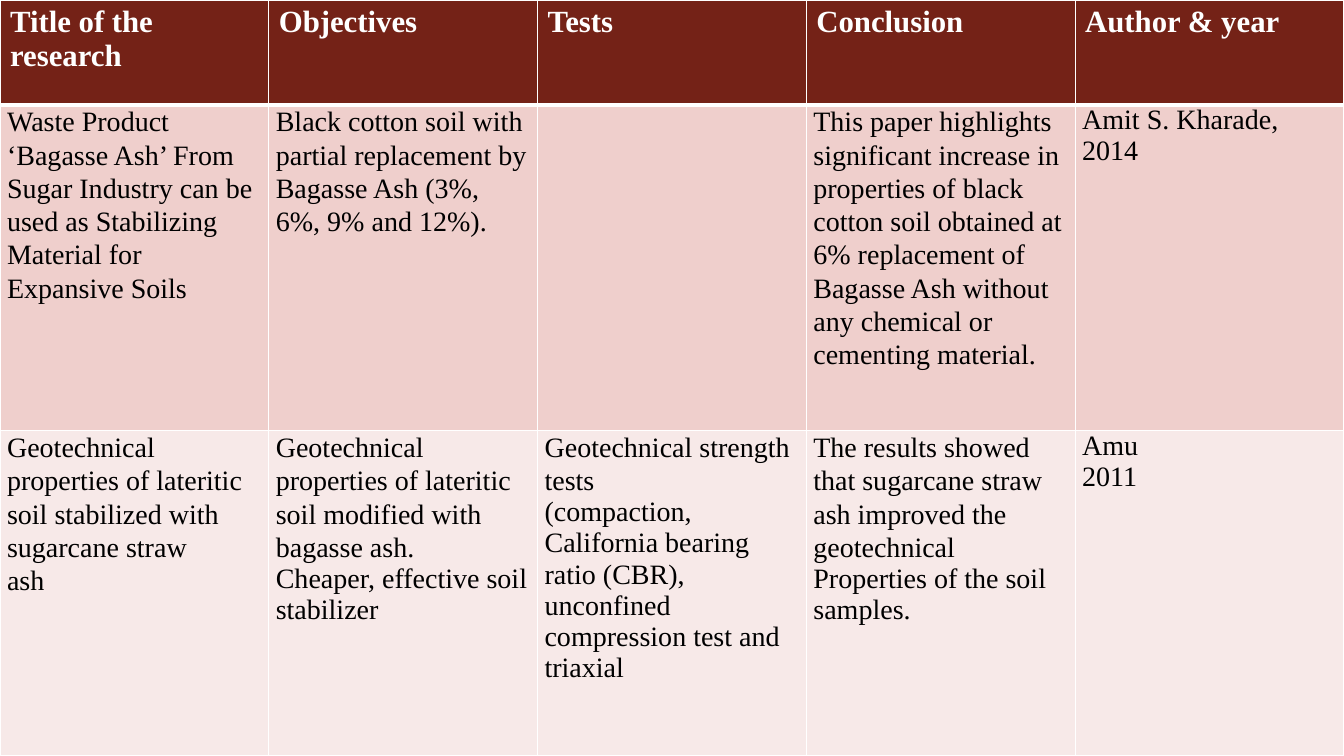
from dataclasses import dataclass

from lxml import etree
from pptx import Presentation
from pptx.dml.color import RGBColor
from pptx.oxml.ns import qn
from pptx.util import Inches, Pt

SLIDE_WIDTH = 13.33
SLIDE_HEIGHT = 7.5
HEADER_HEIGHT = 1.04
SINGLE = 1.0
LOOSE = 1.07

HEADINGS = ["Title of the research", "Objectives", "Tests", "Conclusion", "Author & year"]

STUDIES = [
    [
        [("Waste Product ‘Bagasse Ash’ From Sugar Industry can be used as "
          "Stabilizing Material for Expansive Soils", LOOSE)],
        [("Black cotton soil with partial replacement by Bagasse Ash "
          "(3%, 6%, 9% and 12%).", LOOSE)],
        [],
        [("This paper highlights significant increase in properties of black cotton soil "
          "obtained at 6% replacement of Bagasse Ash without any chemical or "
          "cementing material.", LOOSE)],
        [("Amit S. Kharade,", SINGLE), ("2014", SINGLE)],
    ],
    [
        [("Geotechnical properties of lateritic soil stabilized with sugarcane straw", LOOSE),
         ("ash", LOOSE)],
        [("Geotechnical properties of lateritic soil modified with bagasse ash.", LOOSE),
         ("Cheaper, effective soil stabilizer", SINGLE)],
        [("Geotechnical strength tests", LOOSE),
         ("(compaction, California bearing ratio (CBR), unconfined compression test "
          "and triaxial", SINGLE)],
        [("The results showed that sugarcane straw ash improved the geotechnical", LOOSE),
         ("Properties of the soil samples.", SINGLE)],
        [("Amu", SINGLE), ("2011", SINGLE)],
    ],
]


@dataclass(frozen=True)
class Theme:
    font: str = "Times New Roman"
    header_size: int = 22
    body_size: int = 20
    header_fill: str = "742217"
    band_fills: tuple = ("EFCFCC", "F7E9E8")
    header_text: str = "FFFFFF"
    body_text: str = "000000"
    border: str = "FFFFFF"
    thin: int = 1
    thick: int = 3


def write_text(paragraph, text, *, font, size, color, bold=False, spacing=SINGLE):
    paragraph.line_spacing = spacing
    run = paragraph.add_run()
    run.text = text
    run.font.name = font
    run.font.size = Pt(size)
    run.font.bold = bold
    run.font.color.rgb = RGBColor.from_string(color)


class SlideBuilder:
    def __init__(self, slide, theme):
        self.slide = slide
        self.theme = theme

    def add_grid(self, left, top, width, height, row_heights, column_count):
        shape = self.slide.shapes.add_table(
            len(row_heights), column_count,
            Inches(left), Inches(top), Inches(width), Inches(height))
        table = shape.table
        table.horz_banding = False
        for column in table.columns:
            column.width = Inches(width / column_count)
        for row, row_height in zip(table.rows, row_heights):
            row.height = Inches(row_height)
        return table

    def style_cell(self, cell, fill, top, bottom):
        properties = cell._tc.get_or_add_tcPr()
        thin = self.theme.thin
        for side, width in (("L", thin), ("R", thin), ("T", top), ("B", bottom)):
            line = etree.SubElement(properties, qn(f"a:ln{side}"), w=str(Pt(width)))
            solid = etree.SubElement(line, qn("a:solidFill"))
            etree.SubElement(solid, qn("a:srgbClr"), val=self.theme.border)
        cell.fill.solid()
        cell.fill.fore_color.rgb = RGBColor.from_string(fill)

    def fill_header(self, cell, heading):
        theme = self.theme
        self.style_cell(cell, theme.header_fill, theme.thin, theme.thick)
        write_text(cell.text_frame.paragraphs[0], heading, font=theme.font,
                   size=theme.header_size, color=theme.header_text, bold=True)

    def fill_body(self, cell, paragraphs, fill, top):
        theme = self.theme
        self.style_cell(cell, fill, top, theme.thin)
        cell.margin_left = cell.margin_right = Inches(0.07)
        cell.margin_top = cell.margin_bottom = Inches(0)
        frame = cell.text_frame
        for index, (text, spacing) in enumerate(paragraphs):
            paragraph = frame.add_paragraph() if index else frame.paragraphs[0]
            write_text(paragraph, text, font=theme.font, size=theme.body_size,
                       color=theme.body_text, spacing=spacing)

    def add_study_table(self):
        theme = self.theme
        study_height = (SLIDE_HEIGHT - HEADER_HEIGHT) / len(STUDIES)
        row_heights = [HEADER_HEIGHT] + [study_height] * len(STUDIES)
        table = self.add_grid(0, 0, SLIDE_WIDTH, SLIDE_HEIGHT, row_heights, len(HEADINGS))
        for column, heading in enumerate(HEADINGS):
            self.fill_header(table.cell(0, column), heading)
        for row, (study, fill) in enumerate(zip(STUDIES, theme.band_fills), start=1):
            top = theme.thick if row == 1 else theme.thin
            for column, paragraphs in enumerate(study):
                self.fill_body(table.cell(row, column), paragraphs, fill, top)


def main():
    presentation = Presentation()
    presentation.slide_width = Inches(SLIDE_WIDTH)
    presentation.slide_height = Inches(SLIDE_HEIGHT)
    slide = presentation.slides.add_slide(presentation.slide_layouts[6])
    SlideBuilder(slide, Theme()).add_study_table()
    presentation.save("out.pptx")


if __name__ == "__main__":
    main()
